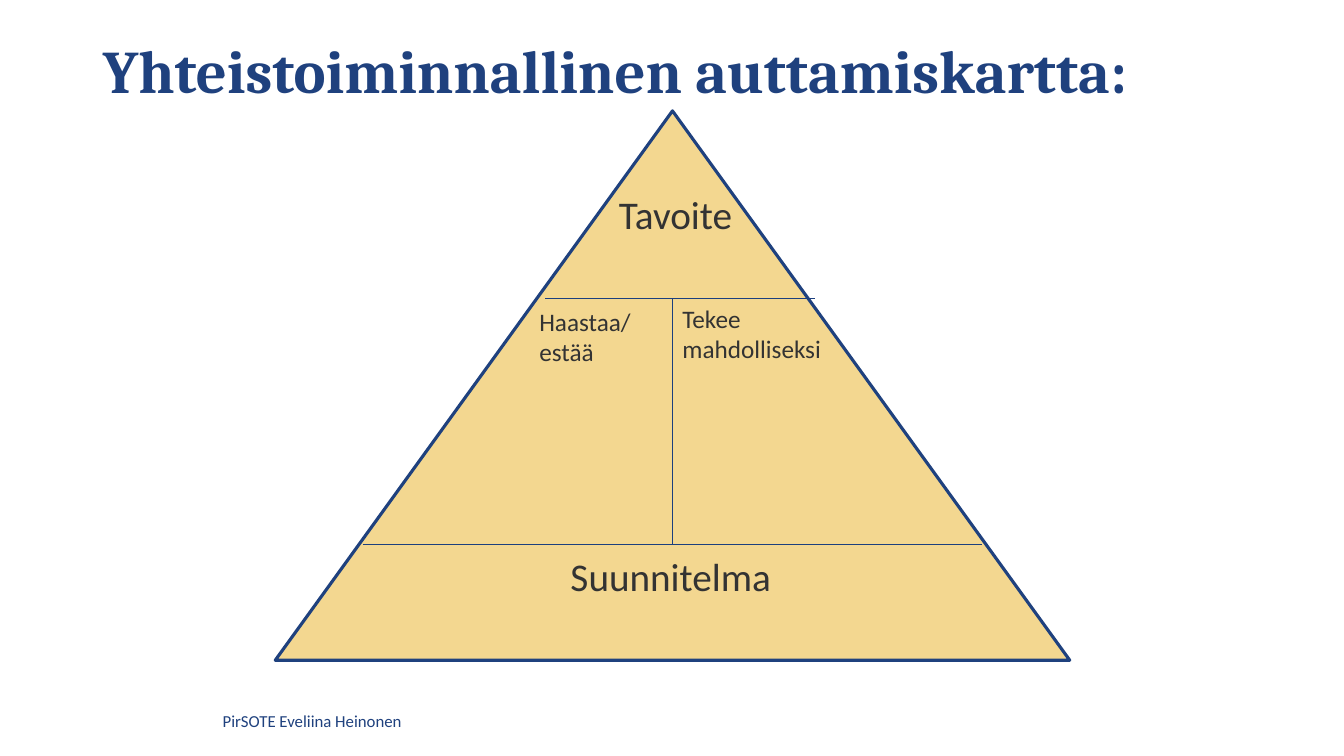
import pptx
import pptx.util
import pptx.dml.color
import pptx.enum.shapes
import pptx.enum.text
from dataclasses import dataclass
from lxml import etree
from pptx.util import Inches


@dataclass(frozen=True)
class Theme:
    navy: str = "1F417E"
    rule: str = "1C3F7E"
    sand: str = "F3D790"
    ink: str = "333333"
    head: str = "Cambria"
    body: str = "Calibri"
    title: float = 43.2
    large: float = 28
    mid: float = 18
    small: float = 12


theme = Theme()
anchor = pptx.enum.text.MSO_ANCHOR
rgb = pptx.dml.color.RGBColor.from_string


def write(box, text, size, color, face=theme.body, bold=False):
    """Fill a box with left-aligned text in one style."""
    frame = box.text_frame
    frame.text = text
    frame.word_wrap = True
    for para in frame.paragraphs:
        para.alignment = pptx.enum.text.PP_ALIGN.LEFT
        for run in para.runs:
            run.font.size = pptx.util.Pt(size)
            run.font.name = face
            run.font.bold = bold
            run.font.color.rgb = rgb(color)
    return frame


deck = pptx.Presentation()
deck.slide_width = Inches(13.33)
deck.slide_height = Inches(7.5)
slide = deck.slides.add_slide(deck.slide_layouts[5])
shapes = slide.shapes

# Title
title = shapes.title
title.left, title.top = Inches(0.92), Inches(0.39)
title.width, title.height = Inches(11.5), Inches(0.68)
frame = write(title, "Yhteistoiminnallinen auttamiskartta:", theme.title,
              theme.navy, theme.head, True)
frame.vertical_anchor = anchor.MIDDLE
frame.auto_size = pptx.enum.text.MSO_AUTO_SIZE.NONE
frame.paragraphs[0].line_spacing = 0.9

# Pyramid
pyramid = shapes.add_shape(
    pptx.enum.shapes.MSO_SHAPE.ISOSCELES_TRIANGLE,
    Inches(2.73), Inches(1.1), Inches(7.88), Inches(5.45))
pyramid.shadow.inherit = False
pyramid.fill.solid()
pyramid.fill.fore_color.rgb = rgb(theme.sand)
pyramid.line.color.rgb = rgb(theme.navy)
pyramid.line.width = pptx.util.Pt(2.25)

# Dividers between the sections
upper, lower, middle = 2.96, 5.4, 6.67
for x1, y1, x2, y2 in [
    (5.41, upper, 8.08, upper),
    (middle, upper, middle, lower),
    (3.6, lower, 9.74, lower),
]:
    rule = shapes.add_connector(
        pptx.enum.shapes.MSO_CONNECTOR.STRAIGHT,
        Inches(x1), Inches(y1), Inches(x2), Inches(y2))
    rule.line.color.rgb = rgb(theme.rule)
    rule.line.width = pptx.util.Pt(0.75)
    etree.SubElement(rule.element.spPr, pptx.oxml.ns.qn("a:effectLst"))

# Section labels and footer
for text, x, y, wide, high, size, color, place in [
    ("Tavoite", 6.04, 1.84, 1.57, 0.57, theme.large, theme.ink, anchor.TOP),
    ("Haastaa/\nestää", 5.25, 2.99, 1.42, 0.71, theme.mid, theme.ink, anchor.TOP),
    ("Tekee mahdolliseksi", middle, upper, 2.19, 0.71, theme.mid, theme.ink,
     anchor.TOP),
    ("Suunnitelma", 5.56, 5.43, 2.52, 0.57, theme.large, theme.ink, anchor.TOP),
    ("PirSOTE Eveliina Heinonen", 2.11, 6.95, 3.84, 0.4, theme.small, theme.navy,
     anchor.MIDDLE),
]:
    label = shapes.add_textbox(Inches(x), Inches(y), Inches(wide), Inches(high))
    write(label, text, size, color).vertical_anchor = place

deck.save("out.pptx")
